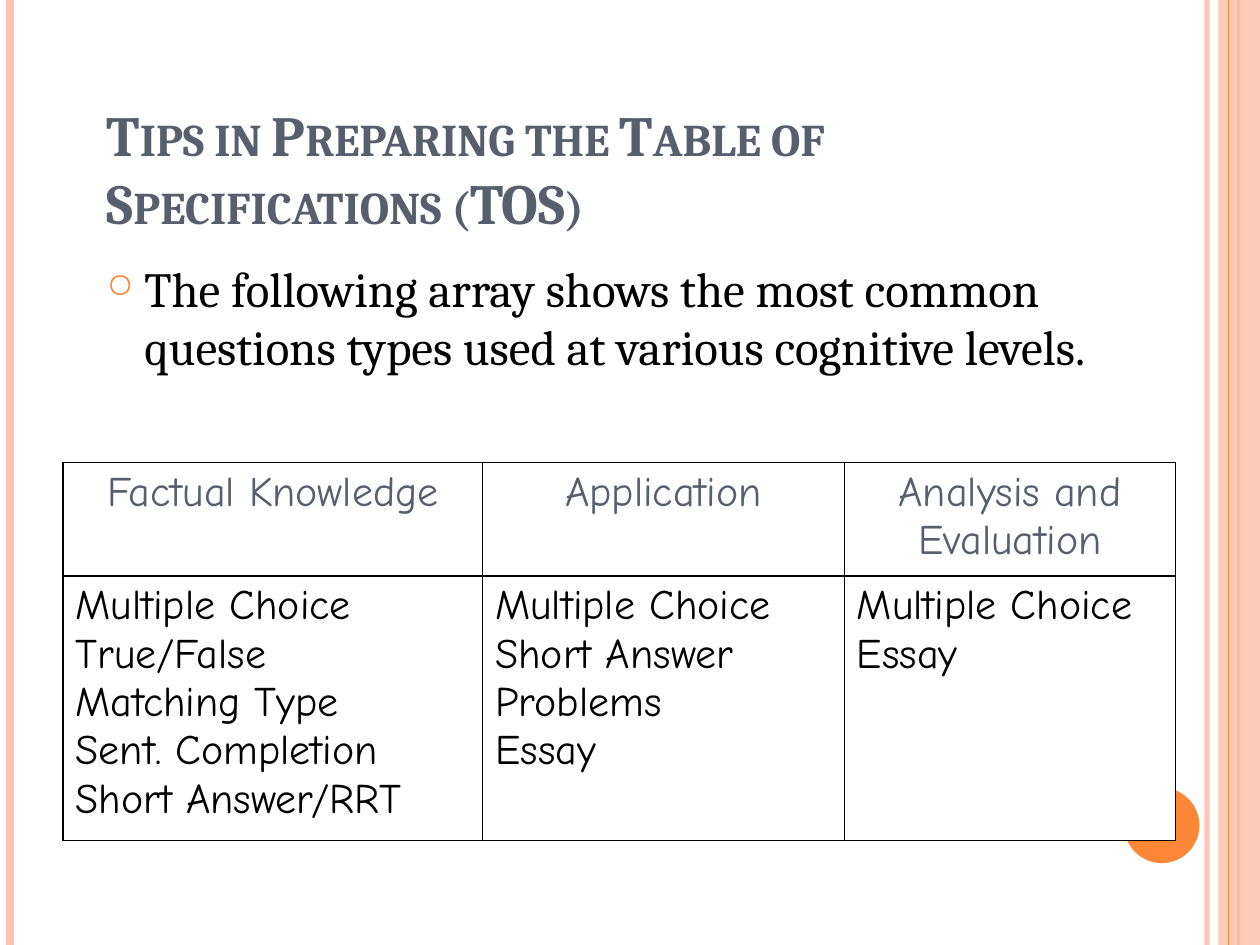
import pptx
import pptx.util
import pptx.dml.color
import pptx.enum.shapes
import pptx.enum.text
import pptx.oxml
import pptx.oxml.ns
from lxml import etree

Cm = pptx.util.Cm
Pt = pptx.util.Pt
RGBColor = pptx.dml.color.RGBColor
qn = pptx.oxml.ns.qn
ALIGN = pptx.enum.text.PP_ALIGN
ANCHOR = pptx.enum.text.MSO_ANCHOR

ORANGE = RGBColor(0xFE, 0x86, 0x37)
PEACH = RGBColor(0xFE, 0xC3, 0xAE)
SLATE = RGBColor(0x57, 0x5F, 0x6D)
BLACK = RGBColor(0, 0, 0)
WHITE = RGBColor(255, 255, 255)

SERIF = "Cambria"
HAND = "Comic Neue"
WIDTH, HEIGHT = 25.4, 19.05

HEADERS = ["Factual Knowledge", "Application", "Analysis and Evaluation"]
QUESTION_TYPES = [
    ["Multiple Choice", "True/False", "Matching Type", "Sent. Completion", "Short Answer/RRT"],
    ["Multiple Choice", "Short Answer", "Problems", "Essay"],
    ["Multiple Choice", "Essay"],
]


def add_text(p, text, font=SERIF, size=24, color=BLACK, bold=False, small_caps=False,
             align=ALIGN.LEFT, hang=0, before=0, bullet=None):
    """Write one formatted run; hang is the hanging indent in cm."""
    p.alignment = align
    p.space_before = Pt(before)
    r = p.add_run()
    r.text = text
    r.font.name, r.font.size, r.font.bold = font, Pt(size), bold
    r.font.color.rgb = color
    if small_caps:
        r.font._element.set("cap", "small")
    pPr = p._p.get_or_add_pPr()
    if hang:
        pPr.set("marL", str(Cm(hang)))
        pPr.set("indent", str(-Cm(hang)))
    if bullet:
        clr = etree.SubElement(pPr, qn("a:buClr"))
        etree.SubElement(clr, qn("a:srgbClr"), val=str(ORANGE))
        etree.SubElement(pPr, qn("a:buSzPct"), val="70000")
        etree.SubElement(pPr, qn("a:buChar"), char=bullet)


def set_alpha(element, percent):
    clr = next(element.iter(qn("a:srgbClr")))
    etree.SubElement(clr, qn("a:alpha"), val=str(percent * 1000))


def set_borders(cell, color=BLACK, width=1):
    tcPr = cell._tc.get_or_add_tcPr()
    for i, side in enumerate(("a:lnL", "a:lnR", "a:lnT", "a:lnB")):
        ln = etree.Element(qn(side), w=str(Pt(width)))
        fill = etree.SubElement(ln, qn("a:solidFill"))
        etree.SubElement(fill, qn("a:srgbClr"), val=str(color))
        tcPr.insert(i, ln)


class SlideBuilder:
    def __init__(self):
        self.prs = pptx.Presentation()
        self.prs.slide_width, self.prs.slide_height = Cm(WIDTH), Cm(HEIGHT)
        self.s = self.prs.slides.add_slide(self.prs.slide_layouts[6])

    def stripe(self, x, color, width, alpha=None):
        """Draw a vertical line over the full slide height."""
        sp = self.s.shapes.add_connector(
            pptx.enum.shapes.MSO_CONNECTOR.STRAIGHT, Cm(x), Cm(0), Cm(x), Cm(HEIGHT))
        sp.line.color.rgb = color
        sp.line.width = Pt(width)
        spPr = sp._element.spPr
        if alpha:
            set_alpha(spPr, alpha)
        etree.SubElement(spPr, qn("a:effectLst"))

    def shape(self, kind, x, y, w, h, color, alpha=None):
        sp = self.s.shapes.add_shape(kind, Cm(x), Cm(y), Cm(w), Cm(h))
        sp.shadow.inherit = False
        sp.fill.solid()
        sp.fill.fore_color.rgb = color
        sp.line.fill.background()
        if alpha:
            set_alpha(sp._element.spPr, alpha)

    def textbox(self, x, y, w, h, text, anchor=ANCHOR.TOP, **fmt):
        tf = self.s.shapes.add_textbox(Cm(x), Cm(y), Cm(w), Cm(h)).text_frame
        tf.word_wrap = True
        tf.vertical_anchor = anchor
        add_text(tf.paragraphs[0], text, **fmt)

    def cell(self, cell, lines, **fmt):
        cell.fill.solid()
        cell.fill.fore_color.rgb = WHITE
        set_borders(cell)
        tf = cell.text_frame
        for i, line in enumerate(lines):
            p = tf.add_paragraph() if i else tf.paragraphs[0]
            add_text(p, line, font=HAND, **fmt)

    def table(self, x, y, widths, heights, headers, columns):
        tbl = self.s.shapes.add_table(len(heights), len(widths), Cm(x), Cm(y),
                                      Cm(sum(widths)), Cm(sum(heights))).table
        for row, h in zip(tbl.rows, heights):
            row.height = Cm(h)
        for i, (w, header, lines) in enumerate(zip(widths, headers, columns)):
            tbl.columns[i].width = Cm(w)
            self.cell(tbl.cell(0, i), [header], color=SLATE, align=ALIGN.CENTER)
            self.cell(tbl.cell(1, i), lines, hang=0.95)


def main():
    b = SlideBuilder()
    shapes = pptx.enum.shapes.MSO_SHAPE

    b.stripe(24.33, PEACH, 3, alpha=93)
    b.stripe(0.2, PEACH, 4.5)
    b.stripe(24.97, ORANGE, 1.5)
    b.shape(shapes.RECTANGLE, 24.56, 0, 0.84, HEIGHT, PEACH, alpha=87)
    b.stripe(24.76, ORANGE, 0.75)
    b.shape(shapes.OVAL, 22.66, 15.88, 1.52, 1.52, ORANGE)

    b.textbox(1.9, 0.43, 19.08, 4.45, "Tips in Preparing the Table of Specifications (TOS)",
              anchor=ANCHOR.BOTTOM, size=32.4, color=SLATE, bold=True, small_caps=True)
    b.textbox(1.9, 5.08, 21.6, 4.45,
              "The following array shows the most common questions types used at various "
              "cognitive levels.", size=28, hang=0.76, before=6, bullet="○")
    b.table(1.27, 9.32, [8.46, 7.29, 6.68], [2.2, 5.12], HEADERS, QUESTION_TYPES)

    b.prs.save("out.pptx")


if __name__ == "__main__":
    main()
